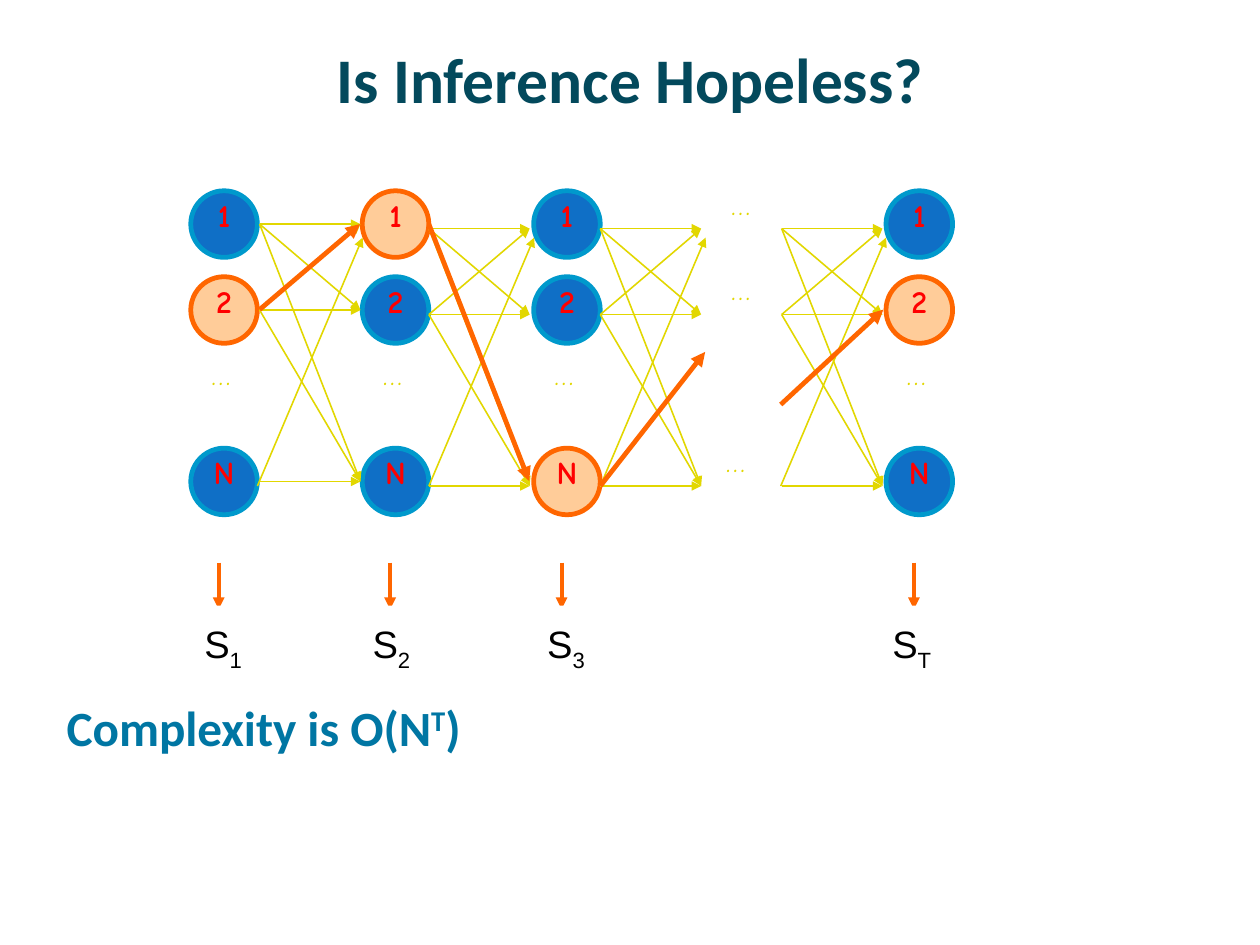
from pptx import Presentation
from pptx.dml.color import RGBColor
from pptx.enum.shapes import MSO_CONNECTOR as CON, MSO_SHAPE as SHAPE
from pptx.enum.text import MSO_ANCHOR as ANCHOR, MSO_AUTO_SIZE as FIT, PP_ALIGN as ALIGN
from pptx.oxml.ns import qn
from pptx.util import Cm, Pt
from lxml.etree import SubElement

NAVY = RGBColor(0x03, 0x49, 0x5C)
TEAL = RGBColor(0x00, 0x76, 0xA3)
BLUE = RGBColor(0x0F, 0x6F, 0xC6)
CYAN = RGBColor(0x00, 0x99, 0xCC)
PEACH = RGBColor(0xFF, 0xCC, 0x99)
ORANGE = RGBColor(0xFF, 0x66, 0x00)
YELLOW = RGBColor(0xE2, 0xD7, 0x00)
RED = RGBColor(0xFF, 0x00, 0x00)
BLACK = RGBColor(0x00, 0x00, 0x00)
WHITE = RGBColor(0xFF, 0xFF, 0xFF)

# Content, with lengths in centimetres
TITLE = "Is Inference Hopeless?"
CLAIM = [("Complexity is O(N", 0), ("T", 30), (")", 0)]
# Each step: left edge, state on the path, subscript, label left
STEPS = [(4.24, "2", "1", 4.29), (8.05, "1", "2", 8.03),
         (11.86, "N", "3", 11.91), (19.69, "2", "T", 19.58)]
ROWS = {"1": 4.24, "2": 6.15, "N": 9.96}
SIZE = 1.48
GAPS = [(16, 4.5), (16, 6.38), (15.88, 10.21)]
# Each fan: left edge, drop below the row top, start of the steep line
FANS = [(5.77, 0.74, 5.72), (9.53, 0.84, 9.53),
        (13.34, 0.84, 13.34), (17.37, 0.84, 17.35)]
SPAN = 2.24
LINKS = [("1", "1"), ("1", "2"), ("1", "N"), ("2", "1"),
         ("2", "2"), ("2", "N"), ("N", "N")]
ROUTE = [(5.77, 6.88, 8, 4.98), (9.53, 4.98, 11.76, 10.69),
         (13.34, 10.8, 15.67, 7.82), (17.35, 8.99, 19.63, 6.88)]

deck = Presentation()
deck.slide_width, deck.slide_height = Cm(28), Cm(21)
slide = deck.slides.add_slide(deck.slide_layouts[5])
shapes = slide.shapes


def write(par, text, font, size, color, bold=False, base=0):
    run = par.add_run()
    run.text = text
    run.font.name, run.font.size, run.font.bold = font, Pt(size), bold
    run.font.color.rgb = color
    if base:
        run._r.get_or_add_rPr().set("baseline", str(base * 1000))


def add_text(x, y, w, h, wrap=False):
    frame = shapes.add_textbox(Cm(x), Cm(y), Cm(w), Cm(h)).text_frame
    frame.word_wrap = wrap
    if not wrap:
        frame.auto_size = FIT.SHAPE_TO_FIT_TEXT
    return frame.paragraphs[0]


def add_dots(x, y):
    par = add_text(x, y, 0.94, 0.56)
    par.line_spacing = 0.27
    write(par, "…", "Comic Neue", 18, YELLOW)


def add_node(x, y, text, fill, edge):
    node = shapes.add_shape(SHAPE.OVAL, Cm(x), Cm(y), Cm(SIZE), Cm(SIZE))
    node.shadow.inherit = False
    node.fill.solid()
    node.fill.fore_color.rgb = fill
    node.line.color.rgb, node.line.width = edge, Pt(3)
    frame = node.text_frame
    frame.word_wrap, frame.vertical_anchor = False, ANCHOR.MIDDLE
    par = frame.paragraphs[0]
    par.alignment, par.line_spacing = ALIGN.CENTER, 0.27
    write(par, text, "Comic Neue", 20, RED, True)


def add_arrow(x1, y1, x2, y2, color, width):
    arrow = shapes.add_connector(CON.STRAIGHT, Cm(x1), Cm(y1), Cm(x2), Cm(y2))
    arrow.line.color.rgb, arrow.line.width = color, Pt(width)
    SubElement(arrow.line._get_or_add_ln(), qn("a:tailEnd"), type="triangle")
    SubElement(arrow._element.spPr, qn("a:effectLst"))


# Title
head = shapes.title
head.left, head.top, head.width, head.height = Cm(1.4), Cm(0.46), Cm(25.2), Cm(2.57)
head.text_frame.vertical_anchor = ANCHOR.MIDDLE
par = head.text_frame.paragraphs[0]
par.alignment = ALIGN.CENTER
write(par, TITLE, "Calibri", 40, NAVY, True)

# Claim
par = add_text(1.23, 15.37, 25.4, 3.4, True)
for text, base in CLAIM:
    write(par, text, "Calibri", 31, TEAL, True, base)

# States at each step
for x, best, sub, left in STEPS:
    for name, y in ROWS.items():
        fill, edge = (PEACH, ORANGE) if name == best else (BLUE, CYAN)
        add_node(x, y, name, fill, edge)
    add_dots(x + 0.21, 8.28)
    add_arrow(x + 0.62, 12.5, x + 0.62, 13.54, ORANGE, 2.5)
for x, y in GAPS:
    add_dots(x, y)

# Transitions between steps
for x, drop, steep in FANS:
    for start, end in LINKS:
        add_arrow(x, ROWS[start] + drop, x + SPAN, ROWS[end] + drop, YELLOW, 1)
    add_arrow(steep, 10.8, steep + 2.34, 5.28, YELLOW, 1)

# Chosen path
for ends in ROUTE:
    add_arrow(*ends, ORANGE, 3)

# White band with step labels
band = shapes.add_shape(SHAPE.RECTANGLE, Cm(3.2), Cm(13.46), Cm(19.69), Cm(1.7))
band.shadow.inherit = False
band.fill.solid()
band.fill.fore_color.rgb = WHITE
band.line.fill.background()
for x, best, sub, left in STEPS:
    par = add_text(left, 13.67, 1.4, 1.27)
    write(par, "S", "Arial", 24, BLACK)
    write(par, sub, "Arial", 24, BLACK, base=-25)

deck.save("out.pptx")
